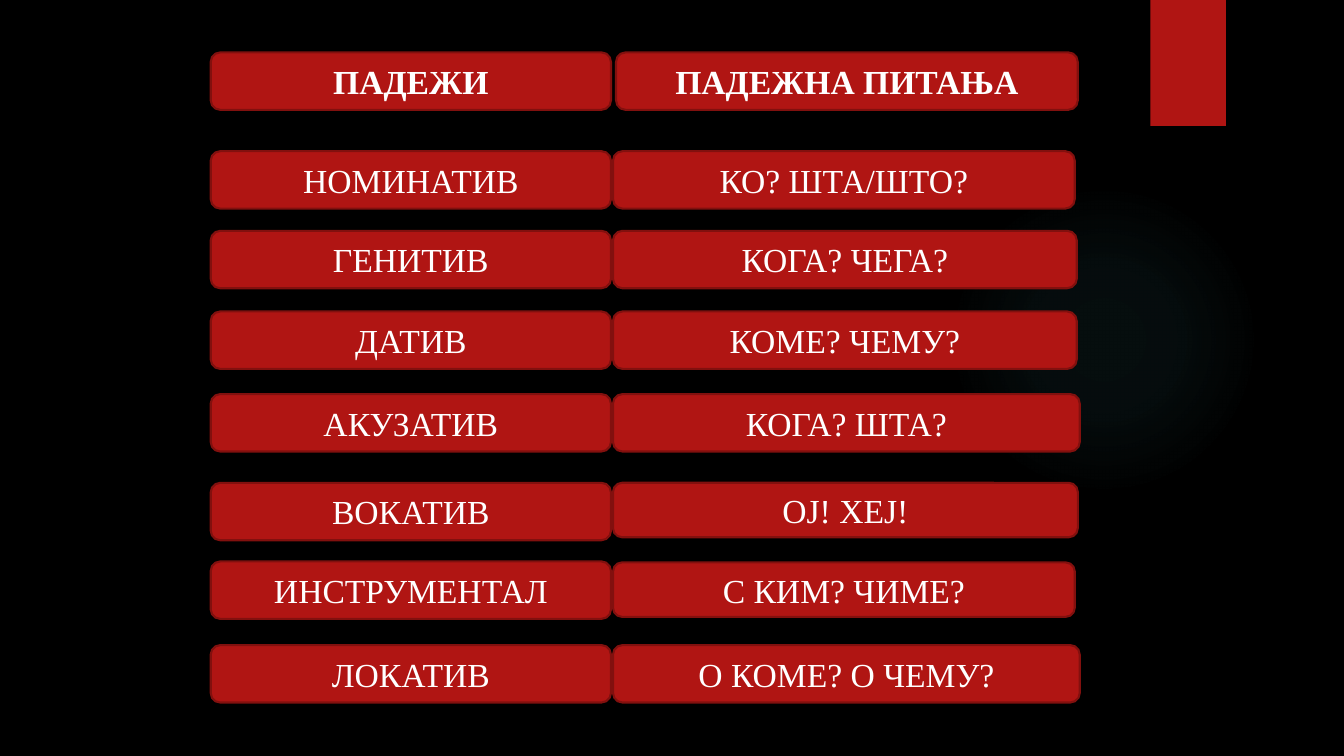
from lxml import etree
from pptx import Presentation
from pptx.dml.color import RGBColor
from pptx.enum.shapes import MSO_SHAPE
from pptx.enum.text import MSO_ANCHOR, PP_ALIGN
from pptx.oxml import parse_xml
from pptx.oxml.ns import qn
from pptx.util import Inches, Pt

BOX = MSO_SHAPE.FLOWCHART_ALTERNATE_PROCESS
OVAL = MSO_SHAPE.OVAL
RECTANGLE = MSO_SHAPE.RECTANGLE
MIDDLE = MSO_ANCHOR.MIDDLE
CENTER = PP_ALIGN.CENTER

BLACK, WHITE, RED, DARK_RED, TEAL = "000000", "FFFFFF", "B01513", "82100E", "50B9C1"
FONT = "Times New Roman"
DRAWING_NS = "http://schemas.openxmlformats.org/drawingml/2006/main"

CASE_LEFT, CASE_WIDTH = 2.09, 3.97
QUESTION_LEFT = 6.08
ROW_HEIGHT = 0.57

# top, case, question, then question box: top, width, height
CASE_ROWS = [
    (1.5, "НОМИНАТИВ", "КО? ШТА/ШТО?", 1.5, 4.58, ROW_HEIGHT),
    (2.29, "ГЕНИТИВ", "КОГА? ЧЕГА?", 2.29, 4.6, ROW_HEIGHT),
    (3.09, "ДАТИВ", "КОМЕ? ЧЕМУ?", 3.09, 4.6, ROW_HEIGHT),
    (3.91, "АКУЗАТИВ", "КОГА? ШТА?", 3.91, 4.63, ROW_HEIGHT),
    (4.79, "ВОКАТИВ", "ОЈ! ХЕЈ!", 4.79, 4.61, 0.54),
    (5.57, "ИНСТРУМЕНТАЛ", "С КИМ? ЧИМЕ?", 5.58, 4.58, 0.54),
    (6.4, "ЛОКАТИВ", "О КОМЕ? О ЧЕМУ?", 6.4, 4.63, ROW_HEIGHT),
]


def color(hex_string):
    return RGBColor.from_string(hex_string)


def add_plain_shape(slide, kind, left, top, width, height):
    shape = slide.shapes.add_shape(
        kind, Inches(left), Inches(top), Inches(width), Inches(height))
    shape.shadow.inherit = False
    shape.fill.solid()
    shape.fill.fore_color.rgb = color(RED)
    shape.line.fill.background()
    return shape


def add_glow(slide, left, top, size):
    """Faint round light, fading out from its centre."""
    glow = add_plain_shape(slide, OVAL, left, top, size, size)
    stops = "".join(
        f'<a:gs pos="{position * 1000}"><a:srgbClr val="{TEAL}">'
        f'<a:alpha val="{opacity * 1000}"/></a:srgbClr></a:gs>'
        for position, opacity in [(0, 7), (36, 6), (69, 0), (100, 0)])
    gradient = parse_xml(
        f'<a:gradFill xmlns:a="{DRAWING_NS}" rotWithShape="1"><a:gsLst>{stops}</a:gsLst>'
        '<a:path path="circle"><a:fillToRect l="50000" t="50000" r="50000" b="50000"/>'
        '</a:path></a:gradFill>')
    properties = glow.fill._xPr
    properties.replace(properties.find(qn("a:solidFill")), gradient)


def add_ribbon(slide, left, top, width, height):
    """Red tab at the top edge, with a soft shadow below it."""
    ribbon = add_plain_shape(slide, RECTANGLE, left, top, width, height)
    effects = ribbon.element.spPr.find(qn("a:effectLst"))
    shadow = etree.SubElement(effects, qn("a:outerShdw"), blurRad=str(Pt(3)),
                              dist=str(Pt(2)), dir="5400000", rotWithShape="0")
    shade = etree.SubElement(shadow, qn("a:srgbClr"), val=BLACK)
    etree.SubElement(shade, qn("a:alpha"), val="45000")


def add_label_box(slide, text, left, top, width, height, bold=False):
    box = add_plain_shape(slide, BOX, left, top, width, height)
    box.line.color.rgb = color(DARK_RED)
    box.line.width = Pt(1.5)
    text_frame = box.text_frame
    text_frame.text = text
    text_frame.word_wrap = True
    text_frame.vertical_anchor = MIDDLE
    paragraph = text_frame.paragraphs[0]
    paragraph.alignment = CENTER
    font = paragraph.runs[0].font
    font.name = FONT
    font.size = Pt(24)
    font.bold = bold
    font.color.rgb = color(WHITE)


def add_header(slide, top):
    add_label_box(slide, "ПАДЕЖИ", CASE_LEFT, top, CASE_WIDTH, ROW_HEIGHT, bold=True)
    add_label_box(slide, "ПАДЕЖНА ПИТАЊА", QUESTION_LEFT + 0.03, top, 4.58, ROW_HEIGHT,
                  bold=True)


def add_case_rows(slide):
    for top, case, question, question_top, width, height in CASE_ROWS:
        add_label_box(slide, case, CASE_LEFT, top, CASE_WIDTH, ROW_HEIGHT)
        add_label_box(slide, question, QUESTION_LEFT, question_top, width, height)


def main():
    presentation = Presentation()
    presentation.slide_width = Inches(13.33)
    presentation.slide_height = Inches(7.5)
    slide = presentation.slides.add_slide(presentation.slide_layouts[6])
    slide.background.fill.solid()
    slide.background.fill.fore_color.rgb = color(BLACK)

    # Decoration
    add_glow(slide, 9.41, 1.83, 3.08)
    add_ribbon(slide, 11.41, 0, 0.75, 1.25)

    # Cases and their questions
    add_header(slide, 0.52)
    add_case_rows(slide)

    presentation.save("out.pptx")


if __name__ == "__main__":
    main()
